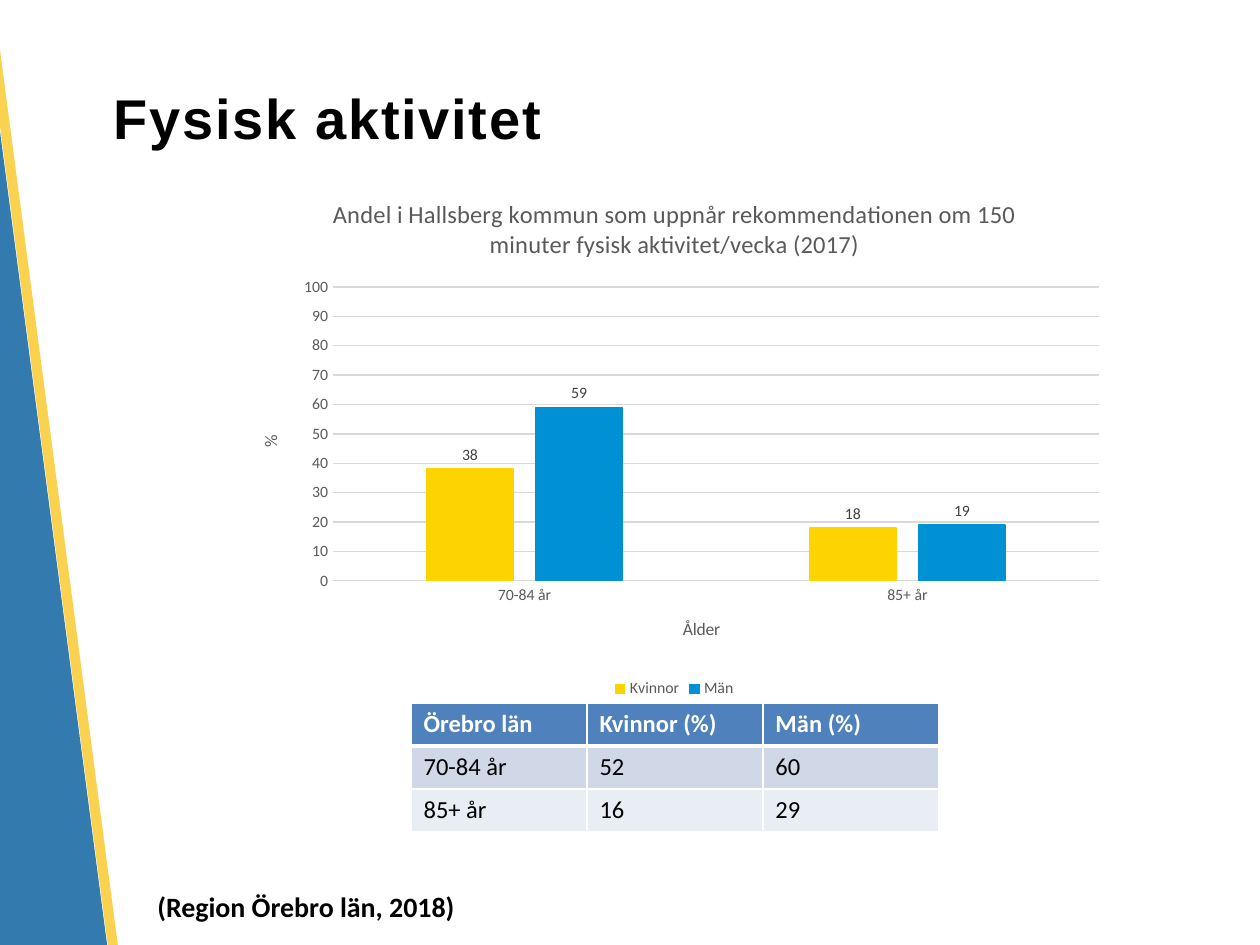
from lxml import etree
from pptx import Presentation
from pptx.chart.data import CategoryChartData
from pptx.dml.color import RGBColor
from pptx.enum.chart import XL_CHART_TYPE, XL_LABEL_POSITION, XL_LEGEND_POSITION, XL_TICK_MARK
from pptx.enum.shapes import MSO_SHAPE
from pptx.enum.text import MSO_ANCHOR, PP_ALIGN
from pptx.oxml import parse_xml
from pptx.oxml.ns import nsdecls, qn
from pptx.util import Emu, Pt

COLUMNS = XL_CHART_TYPE.COLUMN_CLUSTERED
OUTSIDE = XL_LABEL_POSITION.OUTSIDE_END
BOTTOM = XL_LEGEND_POSITION.BOTTOM
NO_TICK = XL_TICK_MARK.NONE
RECT = MSO_SHAPE.RECTANGLE
MIDDLE = MSO_ANCHOR.MIDDLE
LEFT = PP_ALIGN.LEFT

# Content
TITLE = "Fysisk aktivitet"
SOURCE = "(Region Örebro län, 2018)"
CHART_TITLE = "Andel i Hallsberg kommun som uppnår rekommendationen om 150 minuter fysisk aktivitet/vecka (2017)"
CATEGORIES = ["70-84 år", "85+ år"]
SERIES = [("Kvinnor", [38, 18], "women"), ("Män", [59, 19], "men")]
ROWS = [
    ["Örebro län", "Kvinnor (%)", "Män (%)"],
    ["70-84 år", "52", "60"],
    ["85+ år", "16", "29"],
]
COLORS = {
    "black": "000000", "white": "FFFFFF", "gray": "595959", "label": "404040",
    "grid": "D9D9D9", "women": "FDD400", "men": "0090D4",
    "head": "4F81BD", "band1": "D0D8E8", "band2": "E9EDF4",
    "blue_bar": "005B9C", "yellow_bar": "FAC828",
}
ROW_FILLS = ["head", "band1", "band2"]

# Layout in px: left, top, width, height
SLIDE = (1260, 945)
BARS = [("blue_bar", 80, (-66, -207, 115, 1428)), ("yellow_bar", 81, (48, -223, 10, 1426))]
BAR_ANGLE = 352.5
TITLE_BOX = (101, 38, 1090, 158)
CHART_BOX = (233, 175, 883, 528)
PLOT_BOX = (333, 287, 766, 294)
TABLE_BOX = (411, 703, 528, 129)
SOURCE_BOX = (145, 883, 343, 47)


def px(n):
    return Emu(round(n * 914400 / 126))


def box(b):
    return [px(n) for n in b]


def rgb(name):
    return RGBColor.from_string(COLORS[name])


def style(font, size, color, bold=False, name="Calibri"):
    font.name, font.size, font.bold = name, Pt(size), bold
    font.color.rgb = rgb(color)


def add_bars(s):
    for color, alpha, b in BARS:
        sp = s.shapes.add_shape(RECT, *box(b))
        sp.rotation = BAR_ANGLE
        sp.shadow.inherit = False
        sp.fill.solid()
        sp.fill.fore_color.rgb = rgb(color)
        sp.line.fill.background()
        clr = sp.fill._xPr.find(".//" + qn("a:srgbClr"))
        etree.SubElement(clr, qn("a:alpha"), val=str(alpha * 1000))


def add_title(s):
    sp = s.shapes.title
    sp.left, sp.top, sp.width, sp.height = box(TITLE_BOX)
    tf = sp.text_frame
    tf.text = TITLE
    tf.vertical_anchor = MIDDLE
    p = tf.paragraphs[0]
    p.alignment = LEFT
    style(p.font, 32, "black", True, "Arial")
    p.runs[0].font._element.set("spc", "100")


def add_axis_title(axis, text):
    tf = axis.axis_title.text_frame
    tf.text = text
    style(tf.paragraphs[0].font, 10, "gray")


def set_plot_layout(chart):
    """Fix the inner plot area as fractions of the chart."""
    area = chart._chartSpace.find(".//" + qn("c:plotArea"))
    for old in area.findall(qn("c:layout")):
        area.remove(old)
    (cx, cy, cw, ch), (x, y, w, h) = CHART_BOX, PLOT_BOX
    parts = {"x": (x - cx) / cw, "y": (y - cy) / ch, "w": w / cw, "h": h / ch}
    values = "".join(f'<c:{k} val="{v:.4f}"/>' for k, v in parts.items())
    area.insert(0, parse_xml(
        f'<c:layout {nsdecls("c")}><c:manualLayout><c:layoutTarget val="inner"/>'
        f'<c:xMode val="edge"/><c:yMode val="edge"/>{values}</c:manualLayout></c:layout>'))


def add_activity_chart(s):
    data = CategoryChartData()
    data.categories = CATEGORIES
    for name, values, _ in SERIES:
        data.add_series(name, values)
    chart = s.shapes.add_chart(COLUMNS, *box(CHART_BOX), data).chart
    style(chart.font, 10, "black")
    tf = chart.chart_title.text_frame
    tf.text = CHART_TITLE
    style(tf.paragraphs[0].font, 14, "gray")
    chart.chart_title.include_in_layout = False

    chart.has_legend = True
    chart.legend.position = BOTTOM
    chart.legend.include_in_layout = False
    style(chart.legend.font, 9, "gray")

    # Axes
    cat, val = chart.category_axis, chart.value_axis
    for axis, text in ((cat, "Ålder"), (val, "%")):
        axis.major_tick_mark = axis.minor_tick_mark = NO_TICK
        style(axis.tick_labels.font, 9, "gray")
        add_axis_title(axis, text)
    val.minimum_scale, val.maximum_scale, val.major_unit = 0, 100, 10
    val.format.line.fill.background()
    for line in (cat.format.line, val.major_gridlines.format.line):
        line.color.rgb = rgb("grid")
        line.width = Pt(0.75)

    # Columns
    plot = chart.plots[0]
    plot.gap_width, plot.overlap, plot.vary_by_categories = 219, -27, False
    for series, (_, _, color) in zip(plot.series, SERIES):
        series.format.fill.solid()
        series.format.fill.fore_color.rgb = rgb(color)
        series.format.line.color.rgb = rgb(color)
        series.format.line.width = Pt(0.75)
        labels = series.data_labels
        labels.show_value = True
        labels.position = OUTSIDE
        style(labels.font, 9, "label")
    set_plot_layout(chart)


def add_borders(cell, bottom):
    tc_pr = cell._tc.get_or_add_tcPr()
    widths = {"lnL": 1, "lnR": 1, "lnT": 1, "lnB": bottom}
    for i, (tag, width) in enumerate(widths.items()):
        tc_pr.insert(i, parse_xml(
            f'<a:{tag} {nsdecls("a")} w="{Pt(width)}"><a:solidFill>'
            f'<a:srgbClr val="{COLORS["white"]}"/></a:solidFill></a:{tag}>'))


def add_county_table(s):
    table = s.shapes.add_table(len(ROWS), len(ROWS[0]), *box(TABLE_BOX)).table
    for i, row in enumerate(ROWS):
        head = i == 0
        for j, text in enumerate(row):
            cell = table.cell(i, j)
            cell.text = text
            cell.fill.solid()
            cell.fill.fore_color.rgb = rgb(ROW_FILLS[i])
            style(cell.text_frame.paragraphs[0].font, 14, "white" if head else "black", head)
            add_borders(cell, 3 if head else 1)


def add_source(s):
    tf = s.shapes.add_textbox(*box(SOURCE_BOX)).text_frame
    tf.word_wrap = True
    tf.text = SOURCE
    style(tf.paragraphs[0].font, 16, "black", True)


def main():
    prs = Presentation()
    prs.slide_width, prs.slide_height = box(SLIDE)
    s = prs.slides.add_slide(prs.slide_layouts[5])
    add_bars(s)
    add_title(s)
    add_county_table(s)
    add_source(s)
    add_activity_chart(s)
    prs.save("out.pptx")


if __name__ == "__main__":
    main()
